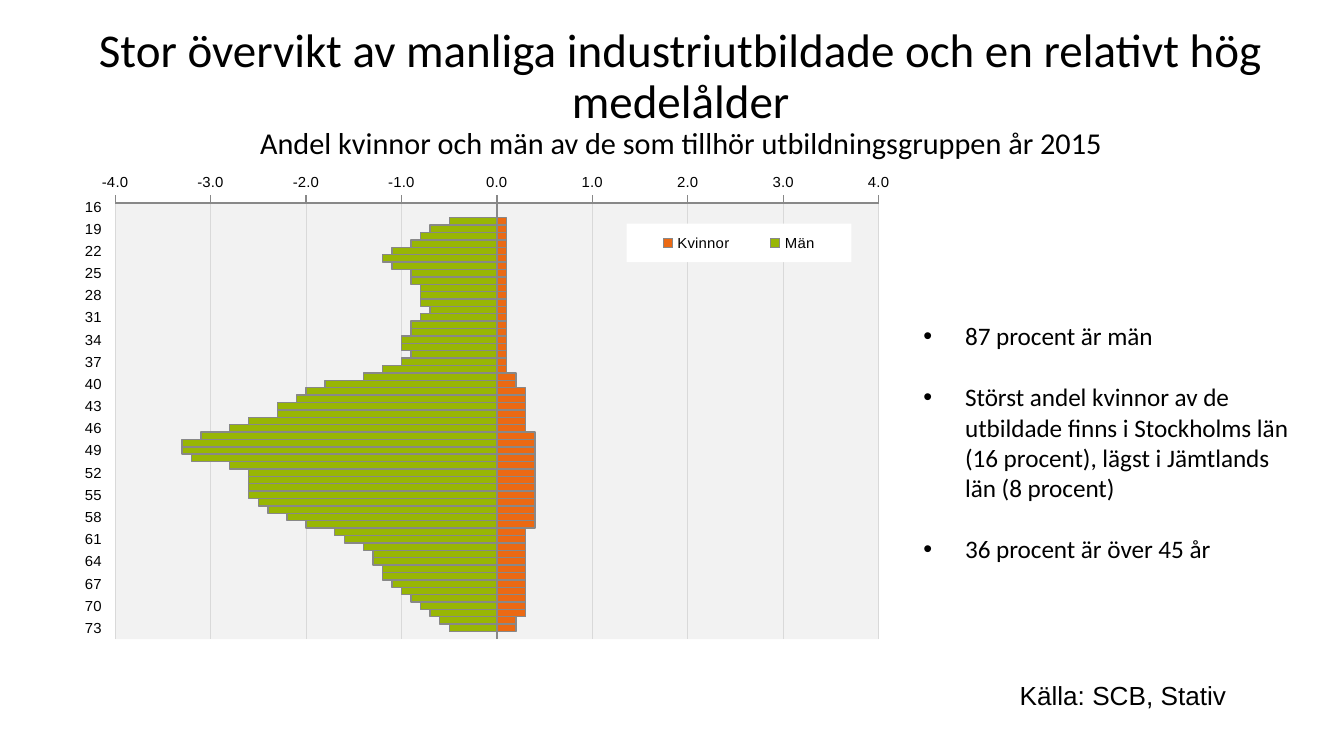
from dataclasses import dataclass

from lxml import etree
from pptx import Presentation
from pptx.chart.data import CategoryChartData
from pptx.dml.color import RGBColor
from pptx.enum.chart import (XL_AXIS_CROSSES, XL_CHART_TYPE, XL_LEGEND_POSITION,
                             XL_TICK_LABEL_POSITION, XL_TICK_MARK)
from pptx.enum.text import PP_ALIGN
from pptx.oxml import parse_xml
from pptx.oxml.ns import nsdecls, qn
from pptx.util import Cm, Pt

BAR = XL_CHART_TYPE.BAR_CLUSTERED
AT_MAX = XL_AXIS_CROSSES.MAXIMUM
LEGEND_RIGHT = XL_LEGEND_POSITION.RIGHT
LABELS_LOW = XL_TICK_LABEL_POSITION.LOW
NO_TICK, TICK_OUT = XL_TICK_MARK.NONE, XL_TICK_MARK.OUTSIDE
CENTER = PP_ALIGN.CENTER


@dataclass(frozen=True)
class Theme:
    text: str = "000000"
    axis: str = "888888"
    grid: str = "D9D9D9"
    plot: str = "F2F2F2"
    legend: str = "FFFFFF"
    men: str = "98B604"
    women: str = "EB6913"
    body_font: str = "Calibri"
    chart_font: str = "Arial"
    title_size: float = 25.2
    subtitle_size: float = 16.2
    bullet_size: float = 13.5
    source_size: float = 14
    chart_size: float = 8


@dataclass(frozen=True)
class Box:
    """Left, top, width and height in centimetres."""
    left: float
    top: float
    width: float
    height: float

    def lengths(self):
        return Cm(self.left), Cm(self.top), Cm(self.width), Cm(self.height)


@dataclass(frozen=True)
class Series:
    name: str
    color: str
    values: tuple


THEME = Theme()
AGES = range(16, 75)
SERIES = (
    Series("Män", THEME.men, (
        0, 0, -0.5, -0.7, -0.8, -0.9, -1.1, -1.2, -1.1, -0.9, -0.9, -0.8, -0.8, -0.8, -0.7,
        -0.8, -0.9, -0.9, -1, -1, -0.9, -1, -1.2, -1.4, -1.8, -2, -2.1, -2.3, -2.3, -2.6,
        -2.8, -3.1, -3.3, -3.3, -3.2, -2.8, -2.6, -2.6, -2.6, -2.6, -2.5, -2.4, -2.2, -2,
        -1.7, -1.6, -1.4, -1.3, -1.3, -1.2, -1.2, -1.1, -1, -0.9, -0.8, -0.7, -0.6, -0.5)),
    Series("Kvinnor", THEME.women,
           (0, 0) + (0.1,) * 21 + (0.2,) * 2 + (0.3,) * 6 + (0.4,) * 13
           + (0.3,) * 12 + (0.2,) * 2),
)
BULLETS = (
    "87 procent är män",
    "Störst andel kvinnor av de utbildade finns i Stockholms län (16 procent), "
    "lägst i Jämtlands län (8 procent)",
    "36 procent är över 45 år",
)


def rgb(color: str) -> RGBColor:
    return RGBColor.from_string(color)


def style_font(font, size: float, name: str) -> None:
    font.size, font.name = Pt(size), name
    font.color.rgb = rgb(THEME.text)


def add_text_box(slide, box: Box, wrap: bool = True):
    tf = slide.shapes.add_textbox(*box.lengths()).text_frame
    tf.word_wrap = wrap
    return tf


def add_title(slide, box: Box, title: str, subtitle: str) -> None:
    tf = add_text_box(slide, box)
    tf.margin_left = tf.margin_top = tf.margin_right = tf.margin_bottom = 0
    p = tf.paragraphs[0]
    p.text = f"{title}\v{subtitle}"
    p.alignment, p.line_spacing = CENTER, 0.9
    for r, size in zip(p.runs, (THEME.title_size, THEME.subtitle_size)):
        style_font(r.font, size, THEME.body_font)


def add_bullets(slide, box: Box, items: tuple) -> None:
    tf = add_text_box(slide, box)
    for i, item in enumerate(items):
        p = tf.paragraphs[0] if i == 0 else tf.add_paragraph()
        p.text = item
        pPr = p._p.get_or_add_pPr()
        pPr.set("marL", str(Cm(0.79)))
        pPr.set("indent", str(-Cm(0.79)))
        if i:
            p.space_before = Pt(16.5)
        etree.SubElement(pPr, qn("a:buFont"), typeface="Arial")
        etree.SubElement(pPr, qn("a:buChar"), char="•")
        style_font(p.runs[0].font, THEME.bullet_size, THEME.body_font)


def add_source(slide, box: Box, text: str) -> None:
    p = add_text_box(slide, box, wrap=False).paragraphs[0]
    p.text = text
    p.line_spacing, p.space_after = Pt(13), Pt(6)
    style_font(p.runs[0].font, THEME.source_size, THEME.chart_font)


def set_layout(parent, index: int, x: float, y: float, w: float, h: float,
               target: str = "") -> None:
    """Place a chart part by fractions of the chart area."""
    for old in parent.findall(qn("c:layout")):
        parent.remove(old)
    inner = f'<c:layoutTarget val="{target}"/>' if target else ""
    parent.insert(index, parse_xml(
        f'<c:layout {nsdecls("c")}><c:manualLayout>{inner}'
        '<c:xMode val="edge"/><c:yMode val="edge"/>'
        f'<c:x val="{x}"/><c:y val="{y}"/><c:w val="{w}"/><c:h val="{h}"/>'
        '</c:manualLayout></c:layout>'))


def solid_fill(color: str):
    return parse_xml(f'<c:spPr {nsdecls("c", "a")}><a:solidFill><a:srgbClr val="{color}"/>'
                     '</a:solidFill><a:ln><a:noFill/></a:ln></c:spPr>')


def style_line(line, color: str, width: float) -> None:
    line.color.rgb, line.width = rgb(color), Pt(width)


def style_axes(chart) -> None:
    ages, share = chart.category_axis, chart.value_axis
    ages.reverse_order = True
    ages.crosses = AT_MAX
    ages.tick_label_position = LABELS_LOW
    ages.major_tick_mark = NO_TICK
    ages._element.find(qn("c:noMultiLvlLbl")).addprevious(
        parse_xml(f'<c:tickLblSkip {nsdecls("c")} val="3"/>'))
    share.minimum_scale, share.maximum_scale, share.major_unit = -4, 4, 1
    share.major_tick_mark = TICK_OUT
    share.tick_labels.number_format = "0.0"
    share.tick_labels.number_format_is_linked = False
    style_line(share.major_gridlines.format.line, THEME.grid, 0.5)
    for axis in (ages, share):
        axis.minor_tick_mark = NO_TICK
        style_line(axis.format.line, THEME.axis, 0.75)


def add_legend(chart) -> None:
    chart.has_legend = True
    legend = chart.legend
    legend.position = LEGEND_RIGHT
    legend.include_in_layout = False
    set_layout(legend._element, 1, 0.66, 0.08, 0.27, 0.08)
    legend._element.find(qn("c:overlay")).addnext(solid_fill(THEME.legend))


def add_pyramid(slide, box: Box) -> None:
    data = CategoryChartData(number_format="0.0")
    data.categories = [str(age) for age in AGES]
    for s in SERIES:
        data.add_series(s.name, s.values)
    chart = slide.shapes.add_chart(BAR, *box.lengths(), data).chart
    chart.has_title = False
    style_font(chart.font, THEME.chart_size, THEME.chart_font)
    plot = chart.plots[0]
    plot.gap_width, plot.overlap, plot.vary_by_categories = 0, 100, False
    for bars, s in zip(plot.series, SERIES):
        bars.invert_if_negative = False
        bars.format.fill.solid()
        bars.format.fill.fore_color.rgb = rgb(s.color)
        style_line(bars.format.line, THEME.axis, 0.75)
    style_axes(chart)
    add_legend(chart)
    area = chart._chartSpace.chart.plotArea
    set_layout(area, 0, 0.045, 0.037, 0.918, 0.906, "inner")
    area.append(solid_fill(THEME.plot))


def main() -> None:
    prs = Presentation()
    prs.slide_width, prs.slide_height = Cm(25.4), Cm(14.29)
    slide = prs.slides.add_slide(prs.slide_layouts[6])
    add_title(slide, Box(1.65, 0.51, 22.43, 2.5),
              "Stor övervikt av manliga industriutbildade och en relativt hög medelålder",
              "Andel kvinnor och män av de som tillhör utbildningsgruppen år 2015")
    add_pyramid(slide, Box(1.47, 3.28, 15.72, 9.32))
    add_source(slide, Box(19.02, 12.85, 4.45, 0.71), "Källa: SCB, Stativ")
    add_bullets(slide, Box(17.2, 5.94, 7.62, 4.88), BULLETS)
    prs.save("out.pptx")


if __name__ == "__main__":
    main()
